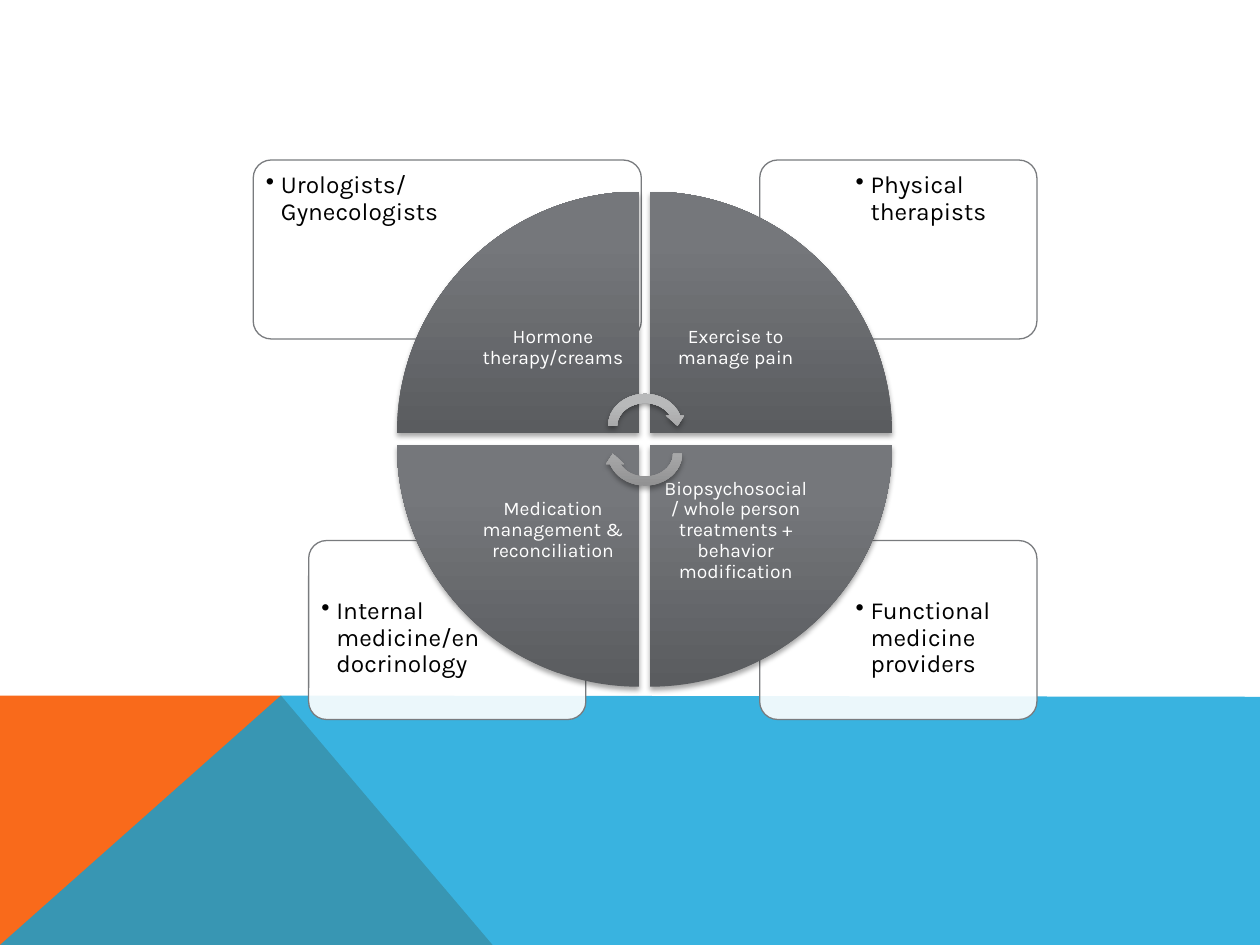
from lxml import etree
from pptx import Presentation
from pptx.dml.color import RGBColor
from pptx.enum.shapes import MSO_SHAPE
from pptx.enum.text import MSO_ANCHOR, PP_ALIGN
from pptx.oxml import parse_xml
from pptx.oxml.ns import qn
from pptx.util import Inches, Pt

ROUND = MSO_SHAPE.ROUNDED_RECTANGLE
WEDGE = MSO_SHAPE.PIE_WEDGE
ARROW = MSO_SHAPE.CIRCULAR_ARROW
TOP, MIDDLE = MSO_ANCHOR.TOP, MSO_ANCHOR.MIDDLE
LEFT, CENTER = PP_ALIGN.LEFT, PP_ALIGN.CENTER
NS = 'xmlns:a="http://schemas.openxmlformats.org/drawingml/2006/main"'
FONT = "Karla"

COLORS = {
    "orange": "F96A1B", "blue": "08A1D9", "white": "FFFFFF",
    "black": "000000", "edge": "797B7E",
}
DARK = ((0, "5A5C5F"), (80, "75777B"), (100, "75787C"))
LIGHT = ((0, "8E8E8F"), (80, "B8B9BA"), (100, "B9BABB"))

BANDS = [
    ("orange", 100, [(0, 7.5), (0, 5.52), (2.23, 5.52), (3.91, 7.5)]),
    ("blue", 80, [(0, 7.5), (2.23, 5.52), (10, 5.53), (10, 7.5)]),
]
CARDS = [
    ("Functional medicine providers", 6.03, 4.29, 2.2, 6.72, 4.68, 1.47),
    ("Internal medicine/endocrinology", 2.45, 4.29, 2.2, 2.48, 4.68, 1.47),
    ("Physical therapists", 6.03, 1.27, 2.2, 6.72, 1.3, 1.47),
    ("Urologists/Gynecologists", 2.01, 1.27, 3.08, 2.04, 1.3, 2.1),
]
WEDGES = [
    ("Hormone therapy/creams", 0, 0),
    ("Exercise to manage pain", 1, 0),
    ("Biopsychosocial/ whole person treatments + behavior modification", 1, 1),
    ("Medication management & reconciliation", 0, 1),
]
WHEEL_X, WHEEL_Y, SIDE, STEP = 3.15, 1.52, 1.92, 2.01
LABEL = 1.36
ARROWS = [(3.09, 0), (3.31, 180)]


def rgb(name):
    return RGBColor.from_string(COLORS[name])


def paint(shape, name, alpha=100):
    shape.shadow.inherit = False
    shape.fill.solid()
    shape.fill.fore_color.rgb = rgb(name)
    shape.line.fill.background()
    if alpha < 100:
        color = shape._element.spPr.find(qn("a:solidFill"))[0]
        etree.SubElement(color, qn("a:alpha"), val=str(alpha * 1000))


def shade(shape, stops):
    paint(shape, "white")
    props = shape._element.spPr
    marks = "".join(
        f'<a:gs pos="{pos * 1000}"><a:srgbClr val="{tone}"/></a:gs>'
        for pos, tone in stops)
    props.replace(props.find(qn("a:solidFill")), parse_xml(
        f'<a:gradFill {NS} rotWithShape="0"><a:gsLst>{marks}</a:gsLst>'
        '<a:lin ang="16200000" scaled="0"/></a:gradFill>'))
    props.find(qn("a:effectLst")).append(parse_xml(
        f'<a:outerShdw {NS} blurRad="{Pt(3.1)}" dist="{Pt(1.8)}" '
        'dir="5400000" rotWithShape="0"><a:srgbClr val="000000">'
        '<a:alpha val="35000"/></a:srgbClr></a:outerShdw>'))


def add(kind, *box):
    return slide.shapes.add_shape(kind, *map(Inches, box))


def write(text, box, inset, size, color, align, anchor):
    frame = slide.shapes.add_textbox(*map(Inches, box)).text_frame
    frame.word_wrap = True
    frame.vertical_anchor = anchor
    frame.margin_left = frame.margin_right = Inches(inset)
    frame.margin_top = frame.margin_bottom = Inches(inset)
    frame.text = text
    para = frame.paragraphs[0]
    para.alignment = align
    para.line_spacing = 0.9
    font = para.runs[0].font
    font.name, font.size = FONT, Pt(size)
    font.color.rgb = rgb(color)
    return para


def bullet(para):
    props = para._p.get_or_add_pPr()
    props.set("marL", str(Inches(0.12)))
    props.set("indent", str(-Inches(0.12)))
    etree.SubElement(props, qn("a:buChar"), char="•")


deck = Presentation()
deck.slide_width, deck.slide_height = Inches(10), Inches(7.5)
slide = deck.slides.add_slide(deck.slide_layouts[6])

for name, alpha, points in BANDS:
    dots = [(Inches(x), Inches(y)) for x, y in points]
    form = slide.shapes.build_freeform(*dots[0])
    form.add_line_segments(dots[1:], close=True)
    paint(form.convert_to_shape(), name, alpha)

for text, x, y, width, text_x, text_y, text_w in CARDS:
    card = add(ROUND, x, y, width, 1.42)
    card.adjustments[0] = 0.1
    paint(card, "white", 90)
    card.line.color.rgb = rgb("edge")
    card.line.width = Pt(0.75)
    bullet(write(text, (text_x, text_y, text_w, 1), 0.07, 14,
                 "black", LEFT, TOP))

for turn, (text, col, row) in enumerate(WEDGES):
    x, y = WHEEL_X + col * STEP, WHEEL_Y + row * STEP
    wedge = add(WEDGE, x, y, SIDE, SIDE)
    wedge.rotation = turn * 90
    shade(wedge, DARK)
    gap = SIDE - LABEL
    write(text, (x + gap * (1 - col), y + gap * (1 - row), LABEL, LABEL),
          0.09, 11, "white", CENTER, MIDDLE)

for y, angle in ARROWS:
    arrow = add(ARROW, 4.79, y, 0.66, 0.58)
    arrow.rotation = angle
    shade(arrow, LIGHT)

deck.save("out.pptx")
